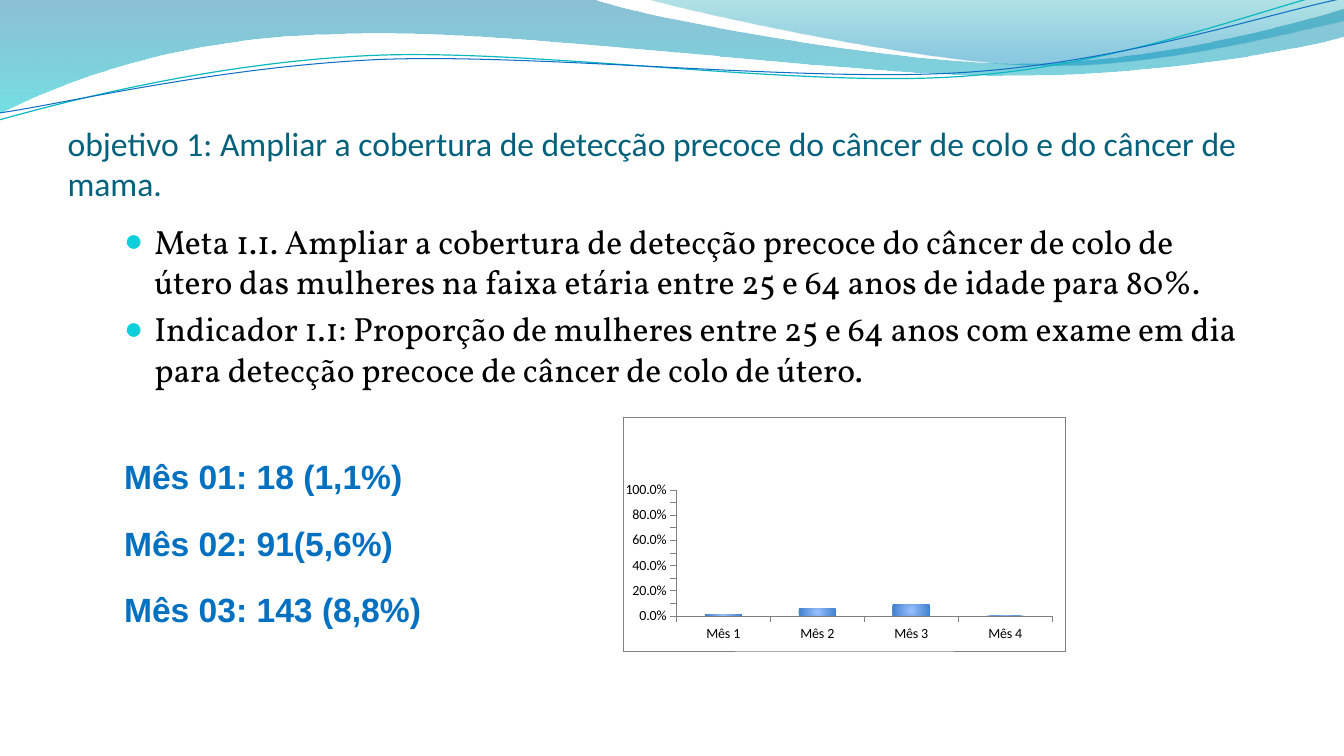
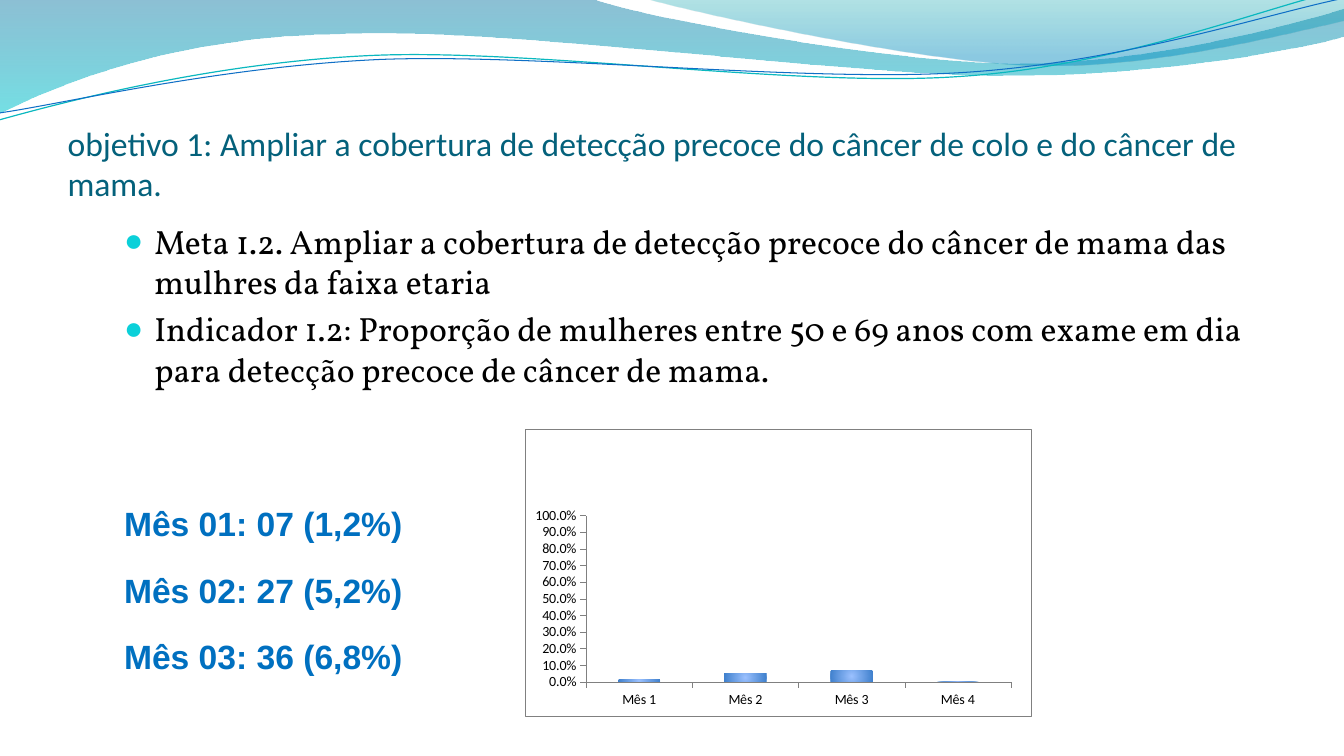
from lxml import etree
from pptx import Presentation
from pptx import util as u
from pptx.chart.data import CategoryChartData
from pptx.dml.color import RGBColor
from pptx.enum import chart as ch, text
from pptx.oxml import parse_xml
from pptx.oxml.ns import nsdecls, qn

PX = 9144  # EMU in one px, 100 px to the inch

TITLE = RGBColor(0x04, 0x61, 0x7B)
BODY = RGBColor(0x00, 0x00, 0x00)
BULLET = RGBColor(0x0B, 0xD0, 0xD9)
MONTH = RGBColor(0x00, 0x70, 0xC0)
WHITE = RGBColor(0xFF, 0xFF, 0xFF)
AXIS = RGBColor(0x80, 0x80, 0x80)
BAR_LIGHT = RGBColor(0x9B, 0xC1, 0xFF)
BAR_DARK = RGBColor(0x3F, 0x80, 0xCD)
BLUE = RGBColor(0x00, 0x74, 0xA1)
CYAN = RGBColor(0x00, 0xC6, 0xCF)
TEAL = RGBColor(0x00, 0xA1, 0xA9)
SKY = RGBColor(0x00, 0x8B, 0xBF)
LINE_TEAL = RGBColor(0x0A, 0xB8, 0xBF)
LINE_BLUE = RGBColor(0x0F, 0x6F, 0xC6)

# Wave outlines in px: a pair is a corner, six numbers are a curve.
# Bands carry gradient stops: position, colour, opacity in percent.
BANDS = [
    ([(0, 0), (587, -1), (634, 17, 885, 63, 1011, 63),
      (1138, 63, 1278, 26, 1333, 9), (1335, 36),
      (1311, 44, 1160, 76, 994, 75), (829, 75, 509, 28, 343, 34),
      (172, 36, 61, 83, -1, 113), (0, 0)],
     [(0, BLUE, 45), (1, CYAN, 55)]),
    ([(639, -1), (679, 11, 909, 62, 1025, 65),
      (1141, 69, 1282, 32, 1333, 21), (1333, 0), (639, -1)],
     [(0, TEAL, 30), (0.8, SKY, 45)]),
]
CURVES = [
    ([(-1, 119), (64, 101, 211, 62, 369, 55), (527, 48, 790, 87, 950, 76),
      (1110, 66, 1252, 8, 1331, -10)], LINE_TEAL, 0.85),
    ([(0, 112), (63, 103, 218, 66, 378, 59), (537, 53, 796, 82, 955, 72),
      (1115, 62, 1255, 14, 1334, -2)], LINE_BLUE, 0.75),
]

HEADING = ("objetivo 1: Ampliar a cobertura de detecção precoce do câncer "
           "de colo e do câncer de mama.")
SLIDES = [
    dict(goals=["Meta 1.1. Ampliar a cobertura de detecção precoce do câncer de "
                "colo de útero das mulheres na faixa etária entre 25 e 64 anos "
                "de idade para 80%.",
                "Indicador 1.1: Proporção de mulheres entre 25 e 64 anos com "
                "exame em dia para detecção precoce de câncer de colo de útero."],
         months=["Mês 01: 18 (1,1%)", "Mês 02: 91(5,6%)", "Mês 03: 143 (8,8%)"],
         gap=33.6, box=(618, 414, 439, 232), plot=(0.12, 0.31, 0.85, 0.54),
         values=(0.011, 0.056, 0.088, 0)),
    dict(goals=["Meta 1.2. Ampliar a cobertura de detecção precoce do câncer de "
                "mama das mulhres da faixa etaria",
                "Indicador 1.2: Proporção de mulheres entre 50 e 69 anos com "
                "exame em dia para detecção precoce de câncer de mama."],
         months=["Mês 01: 07 (1,2%)", "Mês 02: 27 (5,2%)", "Mês 03: 36 (6,8%)"],
         gap=67.2, box=(521, 426, 502, 285), plot=(0.12, 0.3, 0.84, 0.58),
         values=(0.012, 0.052, 0.068, 0)),
]


class Deck:
    def __init__(self):
        self.prs = Presentation()
        self.prs.slide_width, self.prs.slide_height = 1333 * PX, 750 * PX
        self.s = None

    def new_slide(self):
        self.s = self.prs.slides.add_slide(self.prs.slide_layouts[1])

    # Shared waves, kept on the slide master
    def wave(self, outline, closed):
        """Draw the corners and control points, then join them into curves."""
        points = [part[i:i + 2] for part in outline for i in range(0, len(part), 2)]
        builder = self.s.shapes.build_freeform(*points[0], scale=PX)
        builder.add_line_segments(points[1:], close=closed)
        sp = builder.convert_to_shape()
        sp.shadow.inherit = False
        steps = iter(list(sp.element.iter(qn("a:lnTo"))))
        for part in outline[1:]:
            first = next(steps)
            if len(part) == 6:
                first.addprevious(curve := etree.Element(qn("a:cubicBezTo")))
                for step in (first, next(steps), next(steps)):
                    curve.append(step[0])
                    step.getparent().remove(step)
        return sp

    def to_master(self, sp, place):
        self.prs.slide_master.element.cSld.spTree.insert(2 + place, sp.element)

    def waves(self):
        for place, (outline, stops) in enumerate(BANDS):
            sp = self.wave(outline, True)
            sp.line.fill.background()
            sp.fill.gradient()
            sp.fill.gradient_angle = 270
            for stop, (position, color, _) in zip(sp.fill.gradient_stops, stops):
                stop.position, stop.color.rgb = position, color
            for clr, (_, _, opacity) in zip(sp.element.iter(qn("a:srgbClr")), stops):
                etree.SubElement(clr, qn("a:alpha"), val=str(opacity * 1000))
            self.to_master(sp, place)
        for place, (outline, color, width) in enumerate(CURVES, len(BANDS)):
            sp = self.wave(outline, False)
            sp.fill.background()
            sp.line.color.rgb, sp.line.width = color, u.Pt(width)
            self.to_master(sp, place)

    # Text
    def place(self, sp, left, top, width, height):
        sp.left, sp.top = left * PX, top * PX
        sp.width, sp.height = width * PX, height * PX
        sp.text_frame.word_wrap = True
        sp.text_frame.auto_size = text.MSO_AUTO_SIZE.NONE
        return sp.text_frame

    def run(self, p, words, font, color, bold=False):
        p.alignment = text.PP_ALIGN.LEFT
        r = p.add_run()
        r.text = words
        r.font.name, r.font.size = font, u.Pt(24)
        r.font.bold, r.font.color.rgb = bold, color

    def title(self, words):
        tf = self.place(self.s.shapes.title, 67, 77, 1200, 125)
        tf.vertical_anchor = text.MSO_ANCHOR.BOTTOM
        tf.margin_left = tf.margin_right = tf.margin_bottom = 0
        tf.margin_top = 5 * PX
        self.run(tf.paragraphs[0], words, "Calibri", TITLE)

    def body(self, goals, months, gap):
        tf = self.place(self.s.placeholders[1], 113, 214, 1129, 513)
        for i, words in enumerate(goals):
            p = tf.add_paragraph() if i else tf.paragraphs[0]
            p.space_before = u.Pt(4.8 if i else 0)
            self.run(p, words, "Vollkorn", BODY)
            self.bullet(p)
        for i, words in enumerate(months):
            p = tf.add_paragraph()
            p.line_spacing = 1.5
            p.space_before = u.Pt(4.4 if i else gap)
            self.run(p, words, "Arial", MONTH, True)
            pPr = p._p.get_or_add_pPr()
            pPr.set("marL", "0")
            pPr.set("indent", "0")
            etree.SubElement(pPr, qn("a:buNone"))

    def bullet(self, p):
        pPr = p._p.get_or_add_pPr()
        pPr.set("marL", str(30 * PX))
        pPr.set("indent", str(-30 * PX))
        color = etree.SubElement(pPr, qn("a:buClr"))
        etree.SubElement(color, qn("a:srgbClr"), val=str(BULLET))
        etree.SubElement(pPr, qn("a:buSzPct"), val="95000")
        etree.SubElement(pPr, qn("a:buChar"), char="●")

    # Chart
    def chart(self, box, plot, values):
        data = CategoryChartData(number_format="0.0%")
        data.categories = [f"Mês {n}" for n in range(1, 5)]
        data.add_series("Series 1", values)
        chart = self.s.shapes.add_chart(
            ch.XL_CHART_TYPE.COLUMN_CLUSTERED, *(n * PX for n in box), data).chart
        chart.has_legend = chart.has_title = False
        chart.font.name, chart.font.size = "Calibri", u.Pt(10)
        chart.font.color.rgb = BODY
        for axis in (chart.category_axis, chart.value_axis):
            axis.has_major_gridlines = False
            axis.major_tick_mark = ch.XL_TICK_MARK.OUTSIDE
            axis.format.line.color.rgb = AXIS
            axis.format.line.width = u.Pt(0.25)
        axis = chart.value_axis
        axis.minimum_scale, axis.maximum_scale, axis.major_unit = 0, 1, 0.1
        axis.tick_labels.number_format = "0.0%"
        axis.tick_labels.number_format_is_linked = False
        columns = chart.plots[0]
        columns.gap_width, columns.vary_by_categories = 150, False
        self.column_fill(columns.series[0])
        self.chart_frame(chart, plot)

    def column_fill(self, series):
        """Light centre fading to dark edges."""
        fill = series.format.fill
        fill.gradient()
        for stop, position, color in zip(fill.gradient_stops, (0, 1),
                                         (BAR_LIGHT, BAR_DARK)):
            stop.position, stop.color.rgb = position, color
        lin = next(series._element.iter(qn("a:lin")))
        lin.getparent().replace(lin, parse_xml(
            f'<a:path {nsdecls("a")} path="circle">'
            '<a:fillToRect l="50000" t="50000" r="50000" b="50000"/></a:path>'))

    def chart_frame(self, chart, plot):
        """Background, border and fixed inner plot area."""
        def area(line):
            return parse_xml(
                f'<c:spPr {nsdecls("c", "a")}><a:solidFill><a:srgbClr val="{WHITE}"/>'
                f'</a:solidFill>{line}</c:spPr>')
        space = chart.element
        space.find(qn("c:txPr")).addprevious(area(
            f'<a:ln w="{u.Pt(0.25)}"><a:solidFill><a:srgbClr val="{AXIS}"/>'
            '</a:solidFill></a:ln>'))
        plot_area = next(space.iter(qn("c:plotArea")))
        plot_area.append(area("<a:ln><a:noFill/></a:ln>"))
        for old in plot_area.findall(qn("c:layout")):
            plot_area.remove(old)
        sizes = "".join(f'<c:{tag} val="{n}"/>' for tag, n in zip("xywh", plot))
        plot_area.insert(0, parse_xml(
            f'<c:layout {nsdecls("c")}><c:manualLayout><c:layoutTarget val="inner"/>'
            f'<c:xMode val="edge"/><c:yMode val="edge"/>{sizes}'
            '</c:manualLayout></c:layout>'))


def main():
    deck = Deck()
    for i, page in enumerate(SLIDES):
        deck.new_slide()
        if i == 0:
            deck.waves()
        deck.title(HEADING)
        deck.body(page["goals"], page["months"], page["gap"])
        deck.chart(page["box"], page["plot"], page["values"])
    deck.prs.save("out.pptx")


if __name__ == "__main__":
    main()
